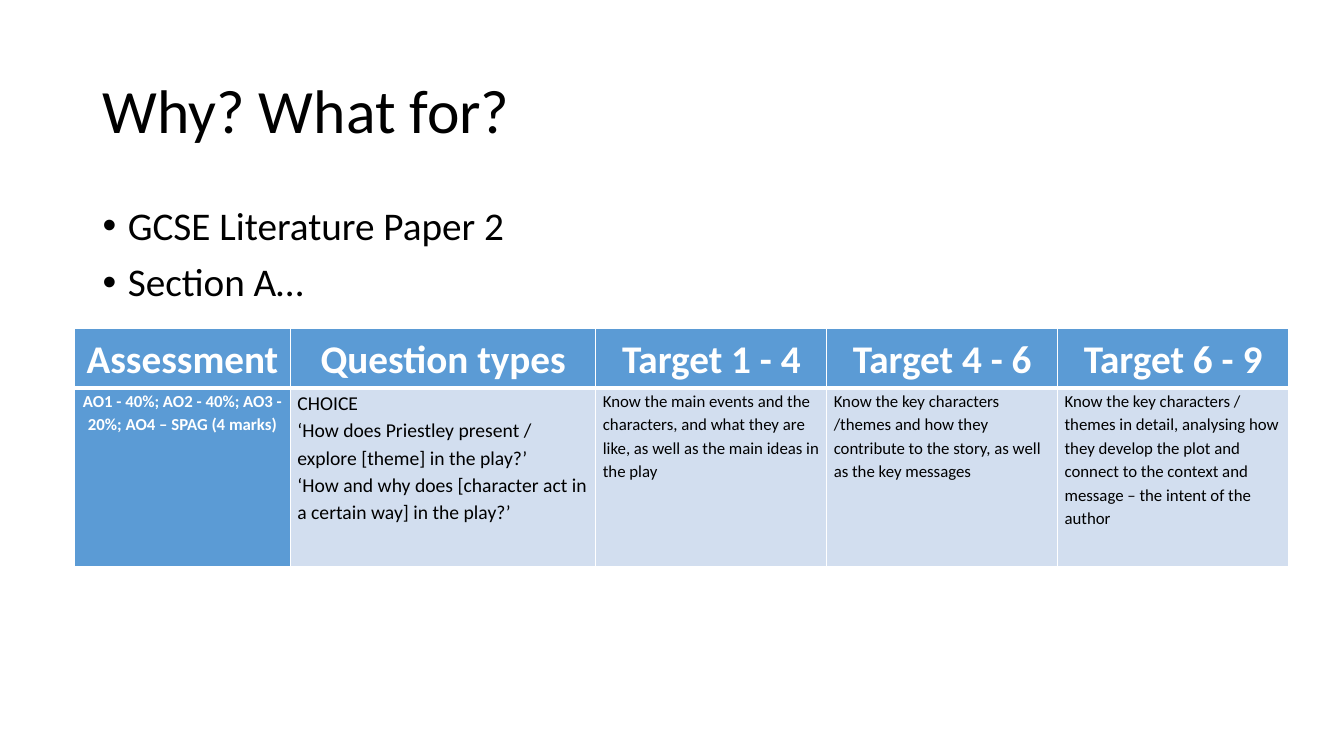
import pptx
import pptx.dml.color
import pptx.enum.text
import pptx.oxml.ns
import pptx.util
from lxml import etree

Inches = pptx.util.Inches
Pt = pptx.util.Pt
RGBColor = pptx.dml.color.RGBColor
PP_ALIGN = pptx.enum.text.PP_ALIGN
MSO_ANCHOR = pptx.enum.text.MSO_ANCHOR
qn = pptx.oxml.ns.qn

BLACK = RGBColor(0x00, 0x00, 0x00)
WHITE = RGBColor(0xFF, 0xFF, 0xFF)
BLUE = RGBColor(0x5B, 0x9B, 0xD5)
PALE_BLUE = RGBColor(0xD2, 0xDE, 0xEF)

COL_WIDTHS = [2.14, 3.03, 2.29, 2.29, 2.29]
ROW_HEIGHTS = [0.59, 1.77]
HEADERS = ["Assessment", "Question types", "Target 1 - 4", "Target 4 - 6", "Target 6 - 9"]
ASSESSMENT = "AO1 - 40%; AO2 - 40%; AO3 - 20%; AO4 – SPAG (4 marks)"
QUESTIONS = [
    "CHOICE",
    "‘How does Priestley present / explore [theme] in the play?’",
    "‘How and why does [character act in a certain way] in the play?’",
]
TARGETS = [
    "Know the main events and the characters, and what they are like, "
    "as well as the main ideas in the play",
    "Know the key characters /themes and how they contribute to the story, "
    "as well as the key messages",
    "Know the key characters / themes in detail, analysing how they develop the plot "
    "and connect to the context and message – the intent of the author",
]


class SlideBuilder:
    font = "Calibri"

    def __init__(self, slide):
        self.slide = slide

    def add_lines(self, tf, lines, size, color=BLACK, bold=False, align=PP_ALIGN.LEFT,
                  spacing=0.9, before=0, after=0):
        for i, line in enumerate(lines):
            p = tf.paragraphs[0] if i == 0 else tf.add_paragraph()
            p.alignment = align
            p.line_spacing = spacing
            p.space_before = Pt(before)
            p.space_after = Pt(after)
            r = p.add_run()
            r.text = line
            r.font.name = self.font
            r.font.size = Pt(size)
            r.font.bold = bold
            r.font.color.rgb = color

    def text(self, left, top, width, height, lines, size, anchor=MSO_ANCHOR.TOP, **style):
        sp = self.slide.shapes.add_textbox(Inches(left), Inches(top), Inches(width), Inches(height))
        tf = sp.text_frame
        tf.word_wrap = True
        tf.vertical_anchor = anchor
        self.add_lines(tf, lines, size, **style)
        return tf

    def bullets(self, left, top, width, height, lines, size):
        tf = self.text(left, top, width, height, lines, size, before=10)
        for p in tf.paragraphs:
            pPr = p._p.get_or_add_pPr()
            pPr.set("marL", str(Inches(0.25)))
            pPr.set("indent", str(-Inches(0.25)))
            etree.SubElement(pPr, qn("a:buFont"), typeface="Arial")
            etree.SubElement(pPr, qn("a:buChar"), char="•")

    def table(self, left, top, col_widths, row_heights):
        frame = self.slide.shapes.add_table(
            len(row_heights), len(col_widths), Inches(left), Inches(top),
            Inches(sum(col_widths)), Inches(sum(row_heights)))
        table = frame.table
        for column, width in zip(table.columns, col_widths):
            column.width = Inches(width)
        for row, height in zip(table.rows, row_heights):
            row.height = Inches(height)
        return table

    def cell(self, cell, lines, size, fill, top_line=1, bottom_line=1, **style):
        cell.margin_left = cell.margin_right = Inches(0.07)
        cell.margin_top = cell.margin_bottom = 0
        tcPr = cell._tc.get_or_add_tcPr()
        for side, width in zip("LRTB", (1, 1, top_line, bottom_line)):
            ln = etree.SubElement(tcPr, qn(f"a:ln{side}"), w=str(Pt(width)))
            solid = etree.SubElement(ln, qn("a:solidFill"))
            etree.SubElement(solid, qn("a:srgbClr"), val=str(WHITE))
        cell.fill.solid()
        cell.fill.fore_color.rgb = fill
        self.add_lines(cell.text_frame, lines, size, spacing=1.15, **style)


def main():
    prs = pptx.Presentation()
    prs.slide_width = Inches(13.33)
    prs.slide_height = Inches(7.5)
    s = SlideBuilder(prs.slides.add_slide(prs.slide_layouts[6]))

    s.text(0.92, 0.4, 11.5, 1.45, ["Why? What for?"], 44, anchor=MSO_ANCHOR.MIDDLE)
    s.bullets(0.92, 2, 11.5, 4.76, ["GCSE Literature Paper 2", "Section A…"], 28)

    table = s.table(0.74, 3.26, COL_WIDTHS, ROW_HEIGHTS)
    heading = dict(fill=BLUE, color=WHITE, bold=True, align=PP_ALIGN.CENTER)
    for col, header in enumerate(HEADERS):
        s.cell(table.cell(0, col), [header], 28, bottom_line=3, **heading)
    s.cell(table.cell(1, 0), [ASSESSMENT], 12, top_line=3, after=10, **heading)
    s.cell(table.cell(1, 1), QUESTIONS, 14, PALE_BLUE, top_line=3)
    for col, target in enumerate(TARGETS, start=2):
        s.cell(table.cell(1, col), [target], 12, PALE_BLUE, top_line=3, after=10)

    prs.save("out.pptx")


if __name__ == "__main__":
    main()
